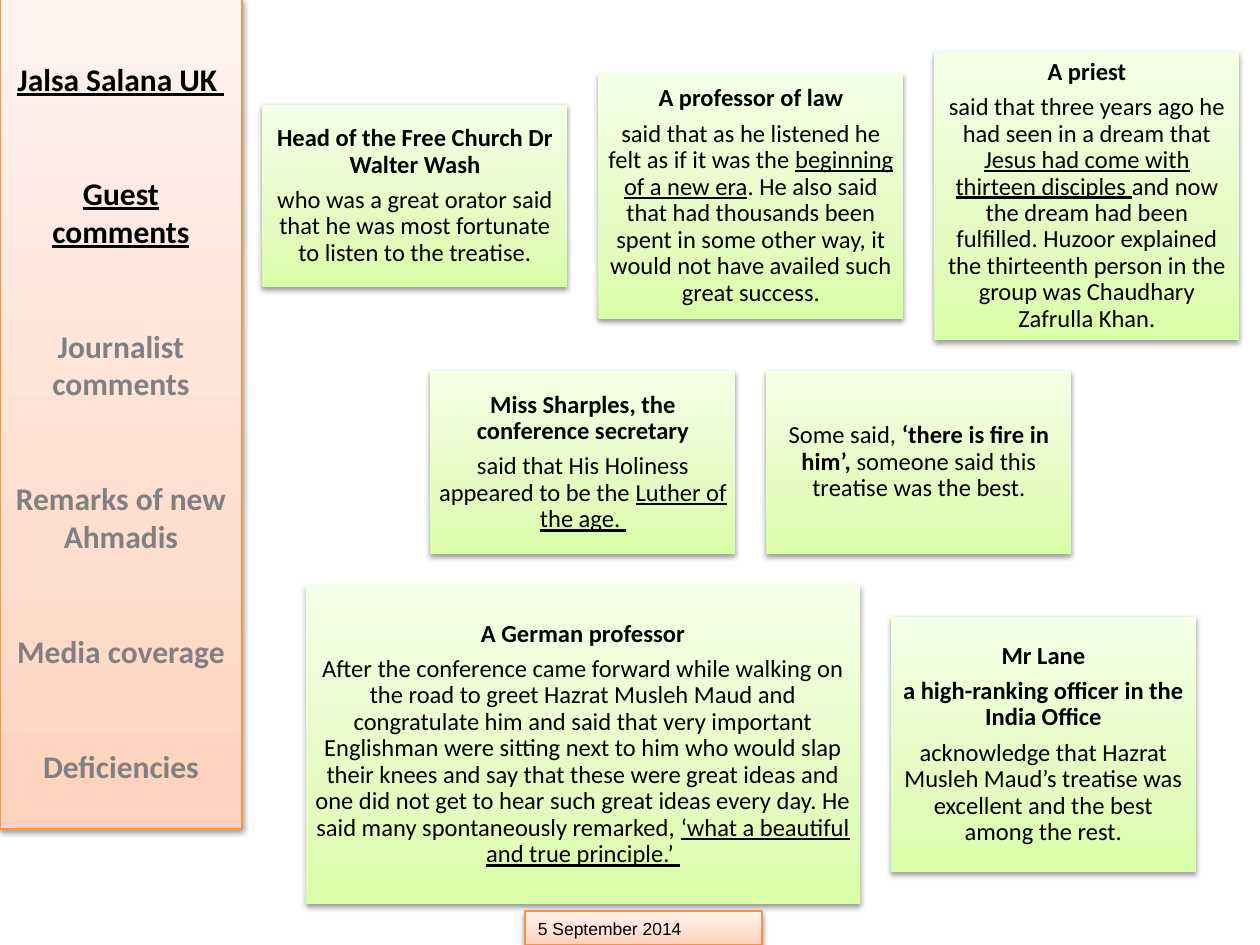
from copy import deepcopy

from pptx import Presentation
from pptx.dml.color import RGBColor
from pptx.enum.shapes import MSO_SHAPE
from pptx.enum.text import MSO_ANCHOR, MSO_AUTO_SIZE, PP_ALIGN
from pptx.oxml import parse_xml
from pptx.oxml.ns import nsdecls, qn
from pptx.util import Pt

PX = 914400 / 126
GAP, CARDS_TOP, CARDS_CENTER = 31, 52, 751
PEACH = ("FFD2BD", "FFDED0", "FFF2ED")
GREEN = ("DAFDA7", "E4FCC2", "F5FFE7")
STOPS = (0, 0.35, 1)

# A paragraph is a list of (text, style); style letters: b bold, u underlined.
TITLE = [("Jalsa Salana UK ", "bu")]
SECTIONS = [("Guest comments", "bu", "000000")] + [
    (name, "b", "808080")
    for name in ("Journalist comments", "Remarks of new Ahmadis", "Media coverage", "Deficiencies")
]
DATE = [("5 September 2014", "")]

# Each card: width, height, paragraphs
CARD_ROWS = [
    [
        (305, 183, [
            [("Head of the Free Church Dr Walter Wash", "b")],
            [("who was a great orator said that he was most fortunate to listen to the treatise.", "")],
        ]),
        (305, 246, [
            [("A professor of law", "b")],
            [("said that as he listened he felt as if it was the ", ""),
             ("beginning of a new era", "u"),
             (". He also said that had thousands been spent in some other way, "
              "it would not have availed such great success.", "")],
        ]),
        (305, 288, [
            [("A priest", "b")],
            [("said that three years ago he had seen in a dream that ", ""),
             ("Jesus had come with thirteen disciples ", "u"),
             ("and now the dream had been fulfilled. Huzoor explained the thirteenth "
              "person in the group was Chaudhary Zafrulla Khan.", "")],
        ]),
    ],
    [
        (305, 183, [
            [("Miss Sharples, the conference secretary", "b")],
            [("said that His Holiness appeared to be the ", ""), ("Luther of the age. ", "u")],
        ]),
        (305, 183, [
            [("Some said, ", ""), ("‘there is fire in him’, ", "b"),
             ("someone said this treatise was the best.", "")],
        ]),
    ],
    [
        (554, 319, [
            [("A German professor", "b")],
            [("After the conference came forward while walking on the road to greet Hazrat "
              "Musleh Maud and congratulate him and said that very important Englishman were "
              "sitting next to him who would slap their knees and say that these were great "
              "ideas and one did not get to hear such great ideas every day. He said many "
              "spontaneously remarked, ", ""),
             ("‘what a beautiful and true principle.’ ", "u")],
        ]),
        (305, 256, [
            [("Mr Lane", "b")],
            [("a high-ranking officer in the India Office", "b")],
            [("acknowledge that Hazrat Musleh Maud’s treatise was excellent and the best "
              "among the rest.", "")],
        ]),
    ],
]


def px(value):
    return round(value * PX)


def rgb(color):
    return RGBColor.from_string(color)


def place(shape, *bounds):
    for name, value in zip(("left", "top", "width", "height"), bounds):
        setattr(shape, name, px(value))


def decorate(shape, colors, line=None):
    """Apply the vertical gradient, the outline and the soft shadow."""
    shape.fill.gradient()
    shape.fill.gradient_angle = 90
    stop_list = shape._element.spPr.find(".//" + qn("a:gsLst"))
    stop_list.append(deepcopy(stop_list[0]))
    for stop, color, position in zip(shape.fill.gradient_stops, colors, STOPS):
        stop.color.rgb = rgb(color)
        stop.position = position
    if line:
        shape.line.color.rgb = rgb(line)
        shape.line.width = Pt(0.75)
    else:
        shape.line.fill.background()
    shape.shadow.inherit = False
    shape._element.spPr.find(qn("a:effectLst")).append(parse_xml(
        f'<a:outerShdw {nsdecls("a")} blurRad="40000" dist="20000" dir="5400000" rotWithShape="0">'
        '<a:srgbClr val="000000"><a:alpha val="38000"/></a:srgbClr></a:outerShdw>'))


def set_frame(shape, margins, anchor, wrap=True):
    frame = shape.text_frame
    settings = dict(zip(("margin_left", "margin_top", "margin_right", "margin_bottom"),
                        map(px, margins)),
                    vertical_anchor=anchor, word_wrap=wrap, auto_size=MSO_AUTO_SIZE.NONE)
    for name, value in settings.items():
        setattr(frame, name, value)


def write(shape, paragraphs, size, color="000000", font="Calibri", **layout):
    frame = shape.text_frame
    layout = {"alignment": PP_ALIGN.CENTER, "space_before": Pt(0), **layout}
    for index, spans in enumerate(paragraphs):
        para = frame.paragraphs[0] if index == 0 else frame.add_paragraph()
        for name, value in layout.items():
            setattr(para, name, value)
        for text, style in spans:
            span = para.add_run()
            span.text = text
            span.font.color.rgb = rgb(color)
            for name, value in {"size": Pt(size), "name": font, "bold": "b" in style,
                                "underline": "u" in style}.items():
                setattr(span.font, name, value)


def add_sidebar(slide):
    title, body = slide.shapes.title, slide.placeholders[1]
    place(title, 0, -1, 242, 830)
    decorate(title, PEACH, "F79646")
    set_frame(title, (12, 61, 12, 6), MSO_ANCHOR.TOP)
    write(title, [TITLE], 18)

    place(body, 0, 174, 242, 620)
    set_frame(body, (12, 0, 12, 0), MSO_ANCHOR.TOP)
    write(body, [[(text, style)] for text, style, _ in SECTIONS], 18, space_after=Pt(44))
    for para, (_, _, color) in zip(body.text_frame.paragraphs, SECTIONS):
        para.runs[0].font.color.rgb = rgb(color)
        properties = para._p.get_or_add_pPr()
        properties.set("marL", "0")
        properties.set("indent", "0")
        properties.append(parse_xml(f'<a:buNone {nsdecls("a")}/>'))


def add_cards(slide):
    """Centre each row sideways and its cards on the row's middle line."""
    top = CARDS_TOP
    for row in CARD_ROWS:
        row_height = max(height for _, height, _ in row)
        row_width = sum(width for width, _, _ in row) + GAP * (len(row) - 1)
        left = CARDS_CENTER - row_width / 2
        for width, height, paragraphs in row:
            card = slide.shapes.add_shape(MSO_SHAPE.RECTANGLE, 0, 0, 0, 0)
            place(card, left, top + (row_height - height) / 2, width, height)
            decorate(card, GREEN)
            set_frame(card, (8, 8, 8, 8), MSO_ANCHOR.MIDDLE)
            write(card, paragraphs, 14, line_spacing=0.9, space_after=Pt(5))
            left += width + GAP
        top += row_height + GAP


def add_date(slide):
    box = slide.shapes.add_shape(MSO_SHAPE.RECTANGLE, 0, 0, 0, 0)
    place(box, 525, 911, 237, 34)
    decorate(box, PEACH, "F69240")
    set_frame(box, (13, 6, 13, 6), MSO_ANCHOR.MIDDLE)
    write(box, [DATE], 10, font="Arial", alignment=PP_ALIGN.LEFT)


def main():
    deck = Presentation()
    deck.slide_width, deck.slide_height = px(1260), px(945)
    slide = deck.slides.add_slide(deck.slide_layouts[1])
    add_sidebar(slide)
    add_cards(slide)
    add_date(slide)
    deck.save("out.pptx")


if __name__ == "__main__":
    main()
